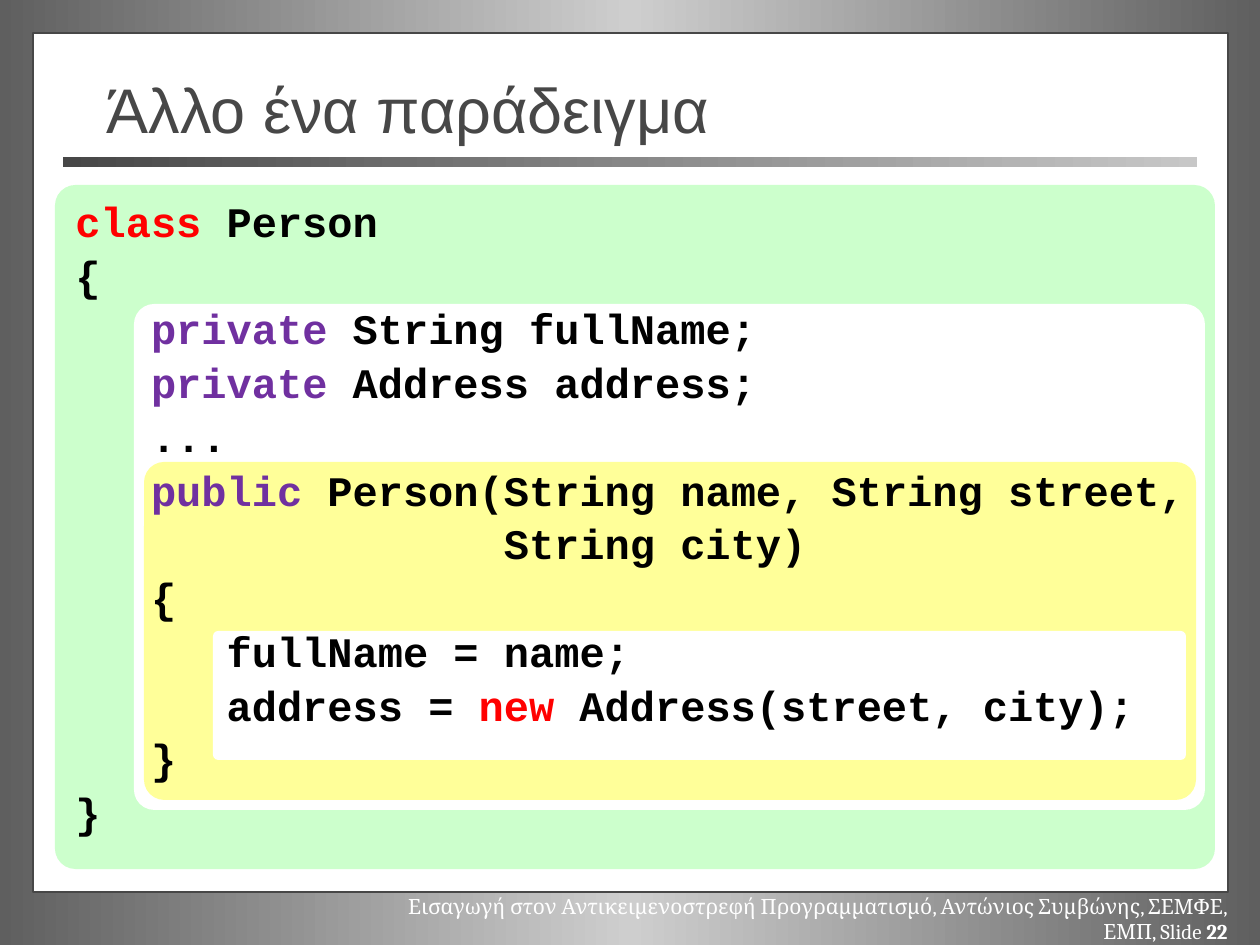
from lxml.etree import SubElement
from pptx import Presentation
from pptx.dml.color import RGBColor
from pptx.enum.shapes import MSO_SHAPE
from pptx.enum.text import MSO_ANCHOR, MSO_AUTO_SIZE, PP_ALIGN
from pptx.oxml.ns import qn
from pptx.util import Pt

EMU_PER_PX = 914400 / 126
CHARACTER_WIDTH = 25.2  # px, one 24 pt Courier New character

WHITE = RGBColor(0xFF, 0xFF, 0xFF)
BLACK = RGBColor(0, 0, 0)
RED = RGBColor(0xFF, 0, 0)
PURPLE = RGBColor(0x70, 0x30, 0xA0)
DARK_GREY = RGBColor(0x47, 0x47, 0x47)
LIGHT_GREY = RGBColor(0xC7, 0xC7, 0xC7)
EDGE_GREY = RGBColor(0x5F, 0x5F, 0x5F)
MIDDLE_GREY = RGBColor(0xCE, 0xCE, 0xCE)
GREEN = RGBColor(0xCC, 0xFF, 0xCC)
YELLOW = RGBColor(0xFF, 0xFF, 0x99)

# Content
TITLE = "Άλλο ένα παράδειγμα"
FOOTER = ("Εισαγωγή στον Αντικειμενοστρεφή Προγραμματισμό, "
          "Αντώνιος Συμβώνης, ΣΕΜΦΕ, ΕΜΠ, Slide ")
SLIDE_NUMBER = "22"
KEYWORDS = {"class ": RED, "new": RED, "private": PURPLE, "public": PURPLE}
CODE = [  # indent in characters, pieces of the line
    (0, ["class ", "Person"]),
    (0, ["{"]),
    (3, ["private", " String fullName;"]),
    (3, ["private", " Address address;"]),
    (3, ["..."]),
    (3, ["public", " Person(String name, String street,"]),
    (17, ["String city)"]),
    (3, ["{"]),
    (6, ["fullName = name;"]),
    (6, ["address = ", "new", " Address(street, city);"]),
    (3, ["}"]),
    (0, ["}"]),
]
SCOPES = [  # left, top, width, height in px, corner, colour
    ((55, 185, 1160, 684), 0.03, GREEN),
    ((134, 304, 1071, 506), 0.04, WHITE),
    ((144, 462, 1052, 338), 0.06, YELLOW),
    ((213, 631, 973, 129), 0.04, WHITE),
]


def px(value):
    return round(value * EMU_PER_PX)


def box(*lengths):
    return [px(length) for length in lengths]


def add_text(paragraph, text, font="Arial", size=24, color=BLACK, bold=False):
    run = paragraph.add_run()
    run.text = text
    run.font.name = font
    run.font.size = Pt(size)
    run.font.bold = bold
    run.font.color.rgb = color


def set_gradient(fill, element, colors):
    """Spread the colours evenly from left to right."""
    fill.gradient()
    fill.gradient_angle = 0
    stops = next(element.iter(qn("a:gsLst")))
    for stop in list(stops):
        stops.remove(stop)
    for index, color in enumerate(colors):
        position = index * 100000 // (len(colors) - 1)
        stop = SubElement(stops, qn("a:gs"), pos=str(position))
        SubElement(stop, qn("a:srgbClr"), val=str(color))


def add_panel(slide, kind, place, color=WHITE):
    panel = slide.shapes.add_shape(kind, *box(*place))
    panel.shadow.inherit = False
    panel.fill.solid()
    panel.fill.fore_color.rgb = color
    panel.line.fill.background()
    return panel


def add_text_box(slide, place):
    frame = slide.shapes.add_textbox(*box(*place)).text_frame
    frame.word_wrap = True
    return frame


def format_code_line(paragraph, indent):
    paragraph.line_spacing = 0.9
    properties = paragraph._p.get_or_add_pPr()
    properties.set("marL", str(px(indent * CHARACTER_WIDTH)))
    properties.set("indent", "0")
    space_before = SubElement(properties, qn("a:spcBef"))
    SubElement(space_before, qn("a:spcPct"), val="20000")


def main():
    presentation = Presentation()
    presentation.slide_width, presentation.slide_height = box(1260, 945)
    slide = presentation.slides.add_slide(presentation.slide_layouts[5])

    # Background, page and footer
    set_gradient(slide.background.fill, slide._element,
                 [EDGE_GREY, MIDDLE_GREY, EDGE_GREY])
    page = add_panel(slide, MSO_SHAPE.RECTANGLE, (33, 33, 1195, 859))
    page.line.color.rgb = DARK_GREY
    page.line.width = Pt(1)
    footer = add_text_box(slide, (358, 887, 882, 38)).paragraphs[0]
    footer.alignment = PP_ALIGN.RIGHT
    for text, bold in ((FOOTER, False), (SLIDE_NUMBER, True)):
        add_text(footer, text, font="Cambria", size=12, color=WHITE, bold=bold)

    # Rule under the title
    rule = add_panel(slide, MSO_SHAPE.RECTANGLE, (63, 157, 1134, 10))
    set_gradient(rule.fill, rule._element, [DARK_GREY, LIGHT_GREY])

    # Nested scopes behind the code
    for place, corner, color in SCOPES:
        scope = add_panel(slide, MSO_SHAPE.ROUNDED_RECTANGLE, place, color)
        scope.adjustments[0] = corner

    # Title, brought in front of the page
    title = slide.shapes.title
    slide.shapes._spTree.append(title._element)
    title.left, title.top, title.width, title.height = box(94, 69, 1071, 78)
    title.text_frame.auto_size = MSO_AUTO_SIZE.NONE
    title.text_frame.vertical_anchor = MSO_ANCHOR.MIDDLE
    heading = title.text_frame.paragraphs[0]
    heading.alignment = PP_ALIGN.LEFT
    add_text(heading, TITLE, size=36, color=DARK_GREY)

    # Code listing
    frame = add_text_box(slide, (63, 195, 1143, 675))
    for number, (indent, pieces) in enumerate(CODE):
        paragraph = frame.add_paragraph() if number else frame.paragraphs[0]
        format_code_line(paragraph, indent)
        for piece in pieces:
            add_text(paragraph, piece, font="Courier New", bold=True,
                     color=KEYWORDS.get(piece, BLACK))

    presentation.save("out.pptx")


if __name__ == "__main__":
    main()
